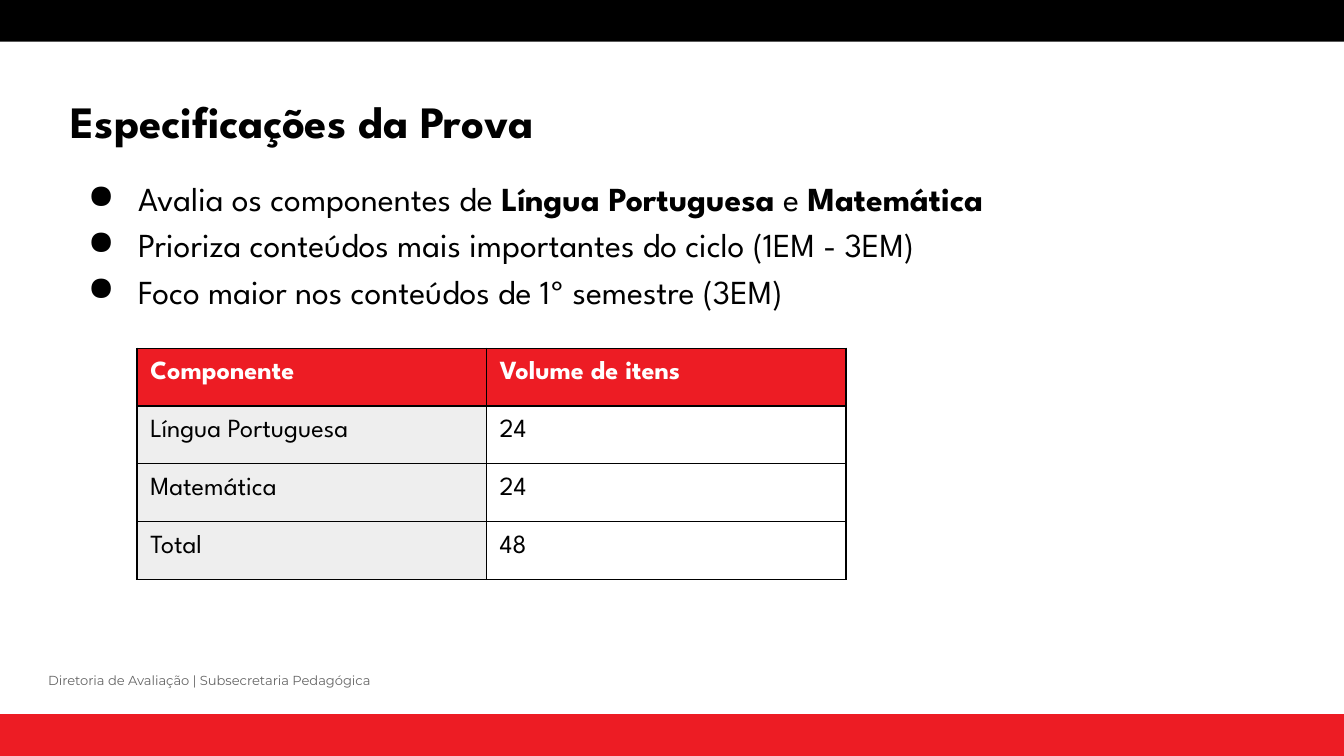
from lxml import etree
from pptx import Presentation
from pptx.dml.color import RGBColor
from pptx.enum.shapes import MSO_SHAPE
from pptx.enum.text import MSO_AUTO_SIZE
from pptx.oxml.ns import qn
from pptx.util import Cm, Pt

RECTANGLE = MSO_SHAPE.RECTANGLE
GROW = MSO_AUTO_SIZE.SHAPE_TO_FIT_TEXT
NO_FIT = MSO_AUTO_SIZE.NONE

COLORS = {
    "black": "000000",
    "white": "FFFFFF",
    "red": "ED1C24",
    "gray": "666666",
    "light": "EEEEEE",
}
HEADING_FONT = "League Spartan"
FOOTER_FONT = "Montserrat"
WIDTH, HEIGHT = 25.4, 14.29
BAND = 0.79


def rgb(name):
    return RGBColor.from_string(COLORS[name])


class SlideBuilder:
    """Holds the style and the current slide; lengths are in centimetres."""

    inset = Cm(0.25)

    def __init__(self, page):
        self.page = page

    def style(self, span, size, color="black", bold=False, font=HEADING_FONT):
        span.font.name = font
        span.font.size = Pt(size)
        span.font.bold = bold
        span.font.color.rgb = rgb(color)

    def band(self, top, color):
        shape = self.page.shapes.add_shape(RECTANGLE, 0, Cm(top), Cm(WIDTH), Cm(BAND))
        shape.shadow.inherit = False
        shape.fill.solid()
        shape.fill.fore_color.rgb = rgb(color)
        shape.line.fill.background()

    def frame(self, left, top, width, height, margin=0.13, fit=GROW):
        box = self.page.shapes.add_textbox(Cm(left), Cm(top), Cm(width), Cm(height))
        frame = box.text_frame
        frame.word_wrap = True
        frame.auto_size = fit
        frame.margin_left = frame.margin_right = self.inset
        frame.margin_top = frame.margin_bottom = Cm(margin)
        return frame

    def text(self, frame, text, size, **look):
        frame.text = text
        self.style(frame.paragraphs[0].runs[0], size, **look)

    def bullets(self, frame, items, size):
        """Each item is a list of (text, bold) spans."""
        for index, spans in enumerate(items):
            para = frame.add_paragraph() if index else frame.paragraphs[0]
            para.line_spacing = 1.15
            props = para._p.get_or_add_pPr()
            props.set("marL", str(Cm(1.27)))
            props.set("indent", str(Cm(-0.95)))
            color = etree.SubElement(props, qn("a:buClr"))
            etree.SubElement(color, qn("a:srgbClr"), val=COLORS["black"])
            etree.SubElement(props, qn("a:buChar"), char="●")
            for text, bold in spans:
                span = para.add_run()
                span.text = text
                self.style(span, size, bold=bold)

    def borders(self, cell):
        props = cell._tc.get_or_add_tcPr()
        for position, side in enumerate(("a:lnL", "a:lnR", "a:lnT", "a:lnB")):
            line = etree.Element(qn(side), w=str(Pt(0.75)))
            fill = etree.SubElement(line, qn("a:solidFill"))
            etree.SubElement(fill, qn("a:srgbClr"), val=COLORS["black"])
            props.insert(position, line)

    def table(self, left, top, widths, row_height, rows, size):
        table = self.page.shapes.add_table(
            len(rows), len(widths), Cm(left), Cm(top),
            Cm(sum(widths)), Cm(row_height * len(rows))).table
        table.first_row = table.horz_banding = False
        for column, width in zip(table.columns, widths):
            column.width = Cm(width)
        for r, values in enumerate(rows):
            for c, value in enumerate(values):
                cell = table.cell(r, c)
                header = r == 0
                cell.margin_left = cell.margin_right = self.inset
                cell.margin_top = cell.margin_bottom = self.inset
                self.text(cell.text_frame, value, size, bold=header,
                          color="white" if header else "black")
                if header or c == 0:
                    cell.fill.solid()
                    cell.fill.fore_color.rgb = rgb("red" if header else "light")
                else:
                    cell.fill.background()
                self.borders(cell)


def main():
    deck = Presentation()
    deck.slide_width, deck.slide_height = Cm(WIDTH), Cm(HEIGHT)
    builder = SlideBuilder(deck.slides.add_slide(deck.slide_layouts[6]))

    # Bands and footer
    builder.band(HEIGHT - BAND, "red")
    builder.band(0, "black")
    footer = builder.frame(0.66, 12.47, 19.41, 0.97, margin=0.25, fit=NO_FIT)
    builder.text(footer, "Diretoria de Avaliação | Subsecretaria Pedagógica", 7,
                 color="gray", font=FOOTER_FONT)

    # Title and bullet list
    title = builder.frame(1.09, 1.65, 23.19, 1.27)
    builder.text(title, "Especificações da Prova", 24, bold=True)
    points = builder.frame(1.09, 3.12, 23.19, 2.79)
    builder.bullets(points, [
        [("Avalia os componentes de ", False), ("Língua Portuguesa", True),
         (" e ", False), ("Matemática", True)],
        [("Prioriza conteúdos mais importantes do ciclo (1EM - 3EM)", False)],
        [("Foco maior nos conteúdos de 1º semestre (3EM)", False)],
    ], 18)

    # Items per component
    builder.table(2.59, 6.58, (6.6, 6.8), 1.07, [
        ("Componente", "Volume de itens"),
        ("Língua Portuguesa", "24"),
        ("Matemática", "24"),
        ("Total", "48"),
    ], 14)

    deck.save("out.pptx")


if __name__ == "__main__":
    main()
